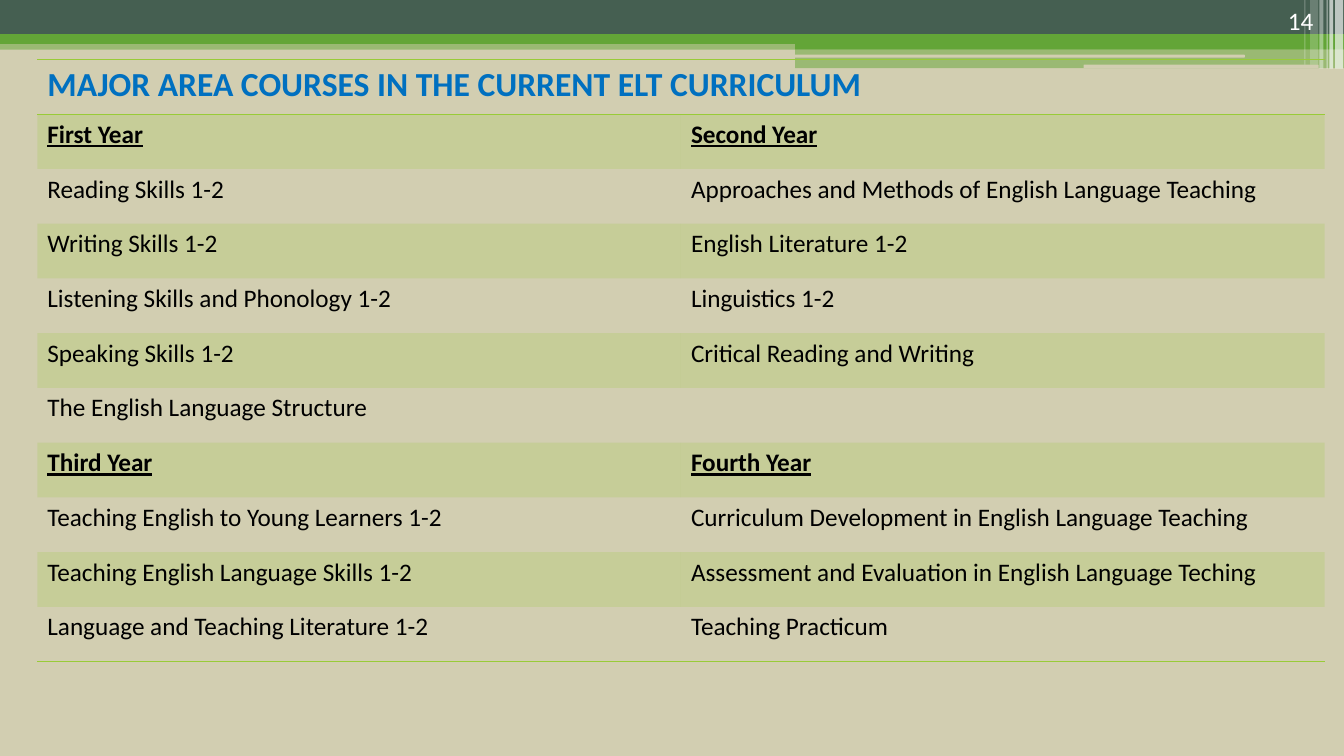
import pptx
import pptx.dml.color
import pptx.enum.shapes
import pptx.enum.text
import pptx.oxml
import pptx.oxml.ns
import pptx.util
from pptx.util import Cm

COLORS = {
    "background": "D2CEB1", "dark": "455F51", "green": "63A537",
    "lime": "99CB38", "white": "FFFFFF", "black": "000000", "blue": "0070C0",
}
NO_STYLE_NO_GRID = "{2D5ABB26-0587-4C30-8999-92F81FD0307C}"


def write_text(frame, text, size=18, color="black", bold=False, underline=False, align=None):
    paragraph = frame.paragraphs[0]
    paragraph.alignment = align
    run = paragraph.add_run()
    run.text = text
    run.font.name = "Calibri"
    run.font.size = pptx.util.Pt(size)
    run.font.bold = bold
    run.font.underline = underline
    run.font.color.rgb = pptx.dml.color.RGBColor.from_string(COLORS[color])


def set_fill(fill, color, opacity=100):
    fill.solid()
    fill.fore_color.rgb = pptx.dml.color.RGBColor.from_string(COLORS[color])
    if opacity < 100:
        color_element = fill._xPr.find(".//" + pptx.oxml.ns.qn("a:srgbClr"))
        alpha = color_element.makeelement(pptx.oxml.ns.qn("a:alpha"), {"val": str(opacity * 1000)})
        color_element.append(alpha)


presentation = pptx.Presentation()
presentation.slide_width = Cm(33.87)
presentation.slide_height = Cm(19.05)
slide = presentation.slides.add_slide(presentation.slide_layouts[6])
set_fill(slide.background.fill, "background")

# Header bands and stripes: left, top, width, height, colour, opacity, rounded
header_bars = [
    (0, 1.02, 33.87, 0.23, "green", 50, False),
    (0, 0, 33.87, 0.86, "dark", 100, False),
    (0, 0.86, 33.87, 0.25, "green", 100, False),
    (20.04, 0.99, 13.83, 0.25, "green", 100, False),
    (20.04, 1.22, 13.83, 0.5, "green", 50, False),
    (20.02, 1.38, 11.35, 0.07, "background", 100, True),
    (27.31, 1.63, 5.92, 0.09, "background", 100, True),
    (33.65, 0, 0.2, 1.73, "white", 65, False),
    (33.5, 0, 0.1, 1.73, "white", 65, False),
    (33.43, 0, 0.03, 1.73, "white", 60, False),
    (33.25, 0, 0.1, 1.73, "white", 40, False),
    (33.02, 0, 0.2, 1.63, "white", 20, False),
    (32.87, 0, 0.03, 1.63, "white", 30, False),
]
shape_types = pptx.enum.shapes.MSO_SHAPE
for left, top, width, height, color, opacity, rounded in header_bars:
    shape_type = shape_types.ROUNDED_RECTANGLE if rounded else shape_types.RECTANGLE
    bar = slide.shapes.add_shape(shape_type, Cm(left), Cm(top), Cm(width), Cm(height))
    bar.shadow.inherit = False
    bar.line.fill.background()
    set_fill(bar.fill, color, opacity)

# Slide number
number_box = slide.shapes.add_textbox(Cm(30.28), Cm(0), Cm(2.82), Cm(1.02))
number_frame = number_box.text_frame
number_frame.word_wrap = True
number_frame.margin_right = 0
number_frame.vertical_anchor = pptx.enum.text.MSO_ANCHOR.BOTTOM
write_text(number_frame, "14", color="white", align=pptx.enum.text.PP_ALIGN.RIGHT)

# Course table
courses = [
    ("MAJOR AREA COURSES IN THE CURRENT ELT CURRICULUM", ""),
    ("First Year", "Second Year"),
    ("Reading Skills 1-2", "Approaches and Methods of English Language Teaching"),
    ("Writing Skills 1-2", "English Literature 1-2"),
    ("Listening Skills and Phonology 1-2", "Linguistics 1-2"),
    ("Speaking Skills 1-2", "Critical Reading and Writing"),
    ("The English Language Structure", ""),
    ("Third Year", "Fourth Year"),
    ("Teaching English to Young Learners 1-2", "Curriculum Development in English Language Teaching"),
    ("Teaching English Language Skills 1-2", "Assessment and Evaluation in English Language Teching"),
    ("Language and Teaching Literature 1-2", "Teaching Practicum"),
]
title_row, last_row = 0, len(courses) - 1
row_borders = {title_row: ("lnT", "lnB"), last_row: ("lnB",)}
row_height = 1.38

table_frame = slide.shapes.add_table(
    len(courses), 2, Cm(0.94), Cm(1.5), Cm(32.44), Cm(row_height * len(courses)))
table = table_frame.table
table.first_row = False
table.horz_banding = False
table._tbl.tblPr.find(pptx.oxml.ns.qn("a:tableStyleId")).text = NO_STYLE_NO_GRID
table.cell(title_row, 0).merge(table.cell(title_row, 1))

for row_index, row_texts in enumerate(courses):
    table.rows[row_index].height = Cm(row_height)
    for column_index, text in enumerate(row_texts):
        cell = table.cell(row_index, column_index)
        if row_index % 2:
            set_fill(cell.fill, "lime", 20)
        else:
            cell.fill.background()

        for position, side in enumerate(row_borders.get(row_index, ())):
            border = pptx.oxml.parse_xml(
                f'<a:{side} {pptx.oxml.ns.nsdecls("a")} w="12700"><a:solidFill>'
                f'<a:srgbClr val="{COLORS["lime"]}"/></a:solidFill></a:{side}>')
            cell._tc.get_or_add_tcPr().insert(position, border)

        if row_index == title_row and text:
            write_text(cell.text_frame, text, size=24, color="blue", bold=True)
        elif text:
            is_year = text.endswith(" Year")
            write_text(cell.text_frame, text, bold=is_year, underline=is_year)

presentation.save("out.pptx")
